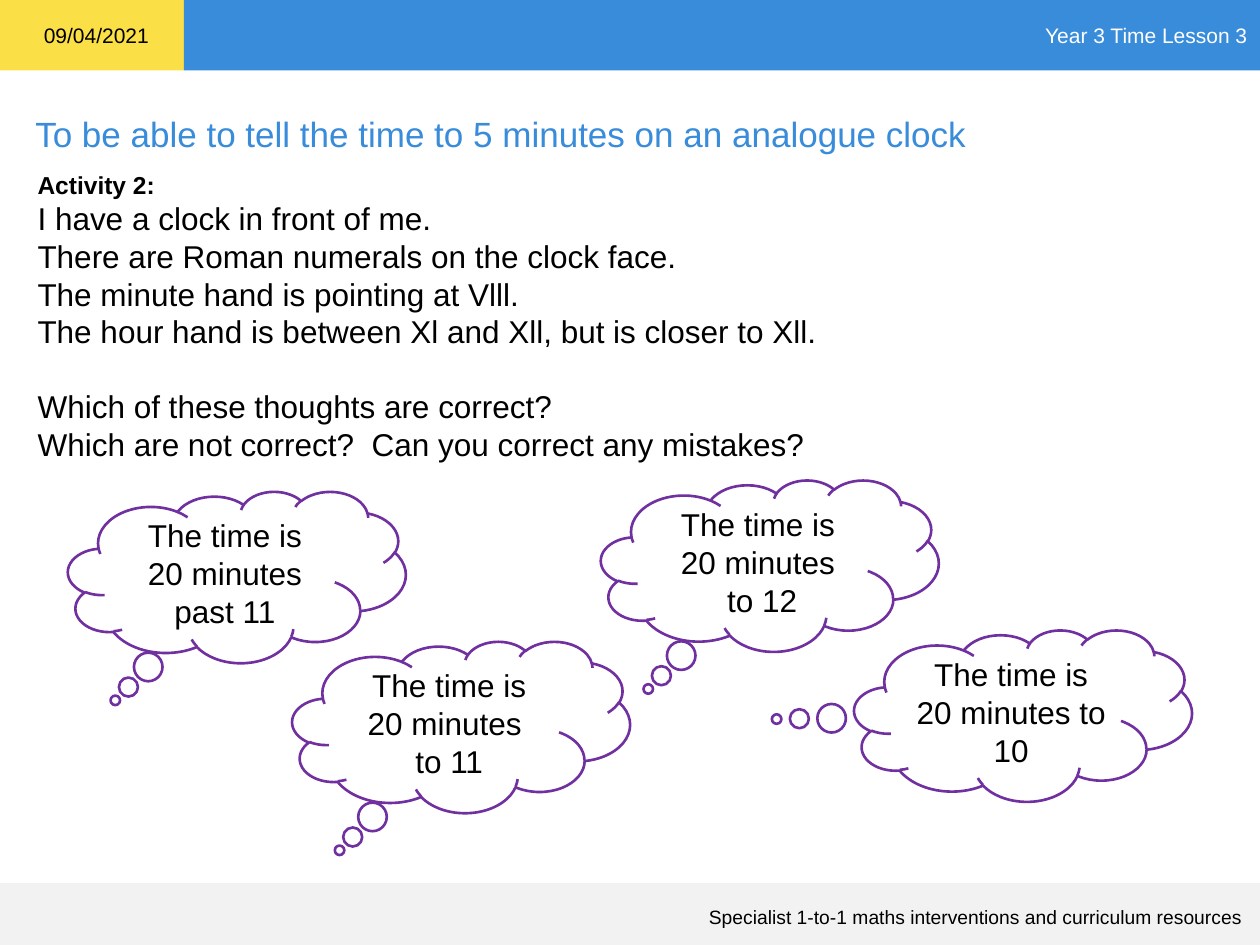
from pptx import Presentation
from pptx.dml.color import RGBColor
from pptx.enum.shapes import MSO_SHAPE
from pptx.enum.text import MSO_ANCHOR, MSO_AUTO_SIZE, PP_ALIGN
from pptx.util import Inches, Pt

COLORS = {
    "yellow": "FADF47",
    "blue": "388CDA",
    "grey": "F2F2F2",
    "purple": "7030A0",
    "white": "FFFFFF",
    "black": "000000",
}


class LessonSlide:
    font_name = "Arial"
    cloud_size = (2.68, 1.36)

    def __init__(self, slide):
        self.slide = slide

    def color(self, name):
        return RGBColor.from_string(COLORS[name])

    def set_text(self, frame, text, size, color="black", align=PP_ALIGN.LEFT,
                 anchor=MSO_ANCHOR.TOP, bold=False, wrap=True):
        frame.text = text
        frame.word_wrap = wrap
        frame.auto_size = MSO_AUTO_SIZE.NONE
        frame.vertical_anchor = anchor
        for paragraph in frame.paragraphs:
            paragraph.alignment = align
            for run in paragraph.runs:
                run.font.name = self.font_name
                run.font.size = Pt(size)
                run.font.bold = bold
                run.font.color.rgb = self.color(color)

    def title(self, text, left, top, width, height):
        heading = self.slide.shapes.title
        heading.left, heading.top = Inches(left), Inches(top)
        heading.width, heading.height = Inches(width), Inches(height)
        self.set_text(heading.text_frame, text, 20, "blue")

    def shape(self, kind, left, top, width, height, fill):
        shape = self.slide.shapes.add_shape(
            kind, Inches(left), Inches(top), Inches(width), Inches(height))
        shape.shadow.inherit = False
        shape.fill.solid()
        shape.fill.fore_color.rgb = self.color(fill)
        return shape

    def band(self, left, top, width, height, fill):
        band = self.shape(MSO_SHAPE.RECTANGLE, left, top, width, height, fill)
        band.line.fill.background()
        return band.text_frame

    def text(self, text, left, top, width, height, size, **style):
        box = self.slide.shapes.add_textbox(
            Inches(left), Inches(top), Inches(width), Inches(height))
        self.set_text(box.text_frame, text, size, **style)
        return box.text_frame

    def thought(self, text, left, top, tail):
        cloud = self.shape(MSO_SHAPE.CLOUD_CALLOUT, left, top, *self.cloud_size, "white")
        cloud.adjustments[0], cloud.adjustments[1] = tail
        cloud.line.color.rgb = self.color("purple")
        cloud.line.width = Pt(1.5)
        self.set_text(cloud.text_frame, text, 18,
                      align=PP_ALIGN.CENTER, anchor=MSO_ANCHOR.MIDDLE)


def main():
    deck = Presentation()
    deck.slide_width, deck.slide_height = Inches(10), Inches(7.5)
    lesson = LessonSlide(deck.slides.add_slide(deck.slide_layouts[5]))

    lesson.band(0, 0, 1.46, 0.56, "yellow")
    header = lesson.band(1.46, 0, 8.54, 0.56, "blue")
    lesson.set_text(header, "Year 3 Time Lesson 3", 12, "white",
                    align=PP_ALIGN.RIGHT, anchor=MSO_ANCHOR.MIDDLE)
    lesson.band(0, 7.01, 10, 0.49, "grey")
    lesson.text("Specialist 1-to-1 maths interventions and curriculum resources",
                0.42, 7.13, 9.54, 0.3, 11,
                align=PP_ALIGN.RIGHT, anchor=MSO_ANCHOR.MIDDLE)
    lesson.title("To be able to tell the time to 5 minutes on an analogue clock",
                 0.18, 0.84, 9.35, 0.44)
    lesson.text("09/04/2021", 0.25, 0.13, 1.04, 0.3, 12, wrap=False)
    lesson.text("Activity 2:", 0.2, 1.3, 1.14, 0.34, 14, bold=True, wrap=False)

    problem = [
        "I have a clock in front of me.",
        "There are Roman numerals on the clock face.",
        "The minute hand is pointing at Vlll.",
        "The hour hand is between Xl and Xll, but is closer to Xll.",
    ]
    questions = [
        "Which of these thoughts are correct?",
        "Which are not correct?  Can you correct any mistakes?",
    ]
    activity = lesson.text("\n".join(problem + questions), 0.2, 1.53, 9.8, 2.22, 18)
    activity.paragraphs[len(problem)].space_before = Pt(21)

    tail_below, tail_left = (-0.36, 0.72), (-0.73, 0.02)
    thoughts = [
        ("The time is 20 minutes past 11", 0.54, 3.9, tail_below),
        ("The time is 20 minutes \nto 11", 2.32, 5.09, tail_below),
        ("The time is 20 minutes\n to 12", 4.77, 3.81, tail_below),
        ("The time is 20 minutes to 10", 6.78, 5, tail_left),
    ]
    for thought in thoughts:
        lesson.thought(*thought)

    deck.save("out.pptx")


if __name__ == "__main__":
    main()
